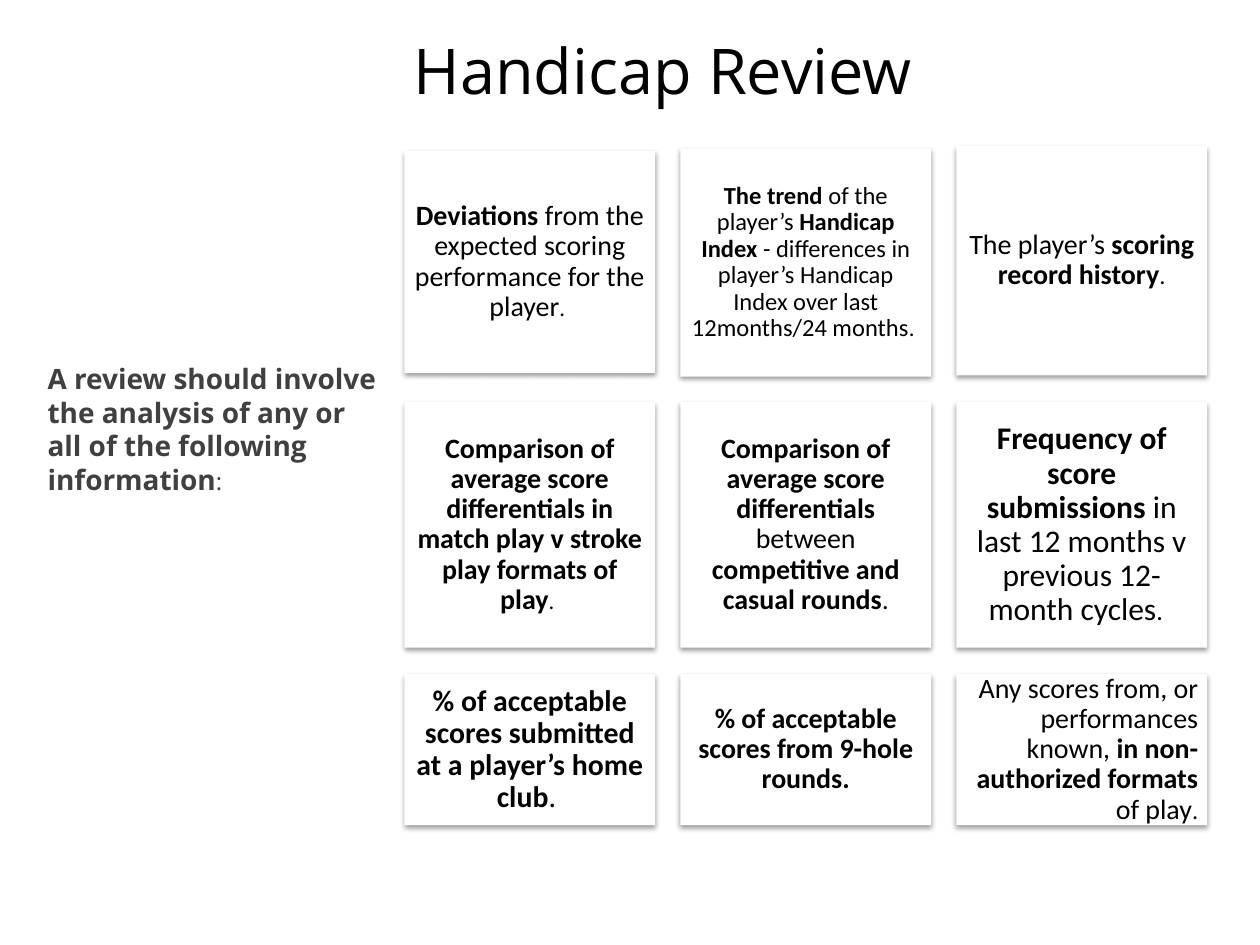
from lxml.etree import SubElement
from pptx import Presentation
from pptx.dml.color import RGBColor
from pptx.enum.shapes import MSO_SHAPE
from pptx.enum.text import MSO_ANCHOR, PP_ALIGN
from pptx.oxml.ns import qn
from pptx.util import Inches, Pt

COLORS = {"text": "000000", "lead": "404040", "card": "FFFFFF", "shadow": "000000"}

COLUMN_LEFTS = [3.21 + 2.19 * column for column in range(3)]
CARD_WIDTH = 1.99

# Each row lists its cards from left to right: top, height, runs, other format.
# A run is its text, size in points and whether it is bold.
CARD_ROWS = [
    [
        (1.2, 1.76, [("Deviations", 16, True),
                     (" from the expected scoring performance for the player", 16, False),
                     (". ", 13, False)], {}),
        (1.18, 1.81, [("The trend ", 14, True), ("of the player’s ", 14, False),
                      ("Handicap Index ", 14, True),
                      ("- differences in player’s Handicap Index over last "
                       "12months/24 months", 14, False),
                      (". ", 13, False)], {"margin": 0.06}),
        (1.16, 1.82, [("The player’s ", 16, False), ("scoring record history", 16, True),
                      (".", 14, False)], {}),
    ],
    [
        (3.19, 1.95, [("Comparison of average score differentials in match play "
                       "v stroke play formats of play", 16, True),
                      (". ", 13, False)], {}),
        (3.19, 1.95, [("Comparison of average score differentials ", 16, True),
                      ("between ", 16, False),
                      ("competitive and casual rounds", 16, True),
                      (".", 15, False)], {}),
        (3.19, 1.95, [("Frequency of score submissions ", 18, True),
                      ("in last 12 months v previous 12-month cycles", 18, False),
                      (".  ", 15, False)], {}),
    ],
    [
        (5.35, 1.2, [("% of acceptable scores submitted at a player’s home club", 17, True),
                     (". ", 17, False)], {}),
        (5.35, 1.2, [("% of acceptable scores from 9-hole rounds.", 16, True)], {}),
        (5.35, 1.2, [("Any scores from, or performances known, ", 16, False),
                     ("in non-authorized formats ", 16, True),
                     ("of play", 16, False), (".", 14, False)],
         {"align": PP_ALIGN.RIGHT}),
    ],
]


def write_text(shape, runs, font="Calibri", color="text", align=PP_ALIGN.CENTER,
               anchor=MSO_ANCHOR.MIDDLE, margins=(0.1, 0.05, 0.1, 0.05), line_spacing=1.0):
    """Fill the shape with one paragraph; margins run left, top, right, bottom."""
    frame = shape.text_frame
    frame.word_wrap = True
    frame.vertical_anchor = anchor
    (frame.margin_left, frame.margin_top,
     frame.margin_right, frame.margin_bottom) = map(Inches, margins)
    paragraph = frame.paragraphs[0]
    paragraph.alignment = align
    paragraph.line_spacing = line_spacing
    for text, size, bold in runs:
        run = paragraph.add_run()
        run.text = text
        run.font.name = font
        run.font.size = Pt(size)
        run.font.bold = bold
        run.font.color.rgb = RGBColor.from_string(COLORS[color])


def add_shadow(shape):
    shape.shadow.inherit = False
    effects = shape._element.spPr.find(qn("a:effectLst"))
    shadow = SubElement(effects, qn("a:outerShdw"), blurRad=str(Pt(3.1)), dist=str(Pt(1.6)),
                        dir=str(90 * 60000), rotWithShape="0")
    color = SubElement(shadow, qn("a:srgbClr"), val=COLORS["shadow"])
    SubElement(color, qn("a:alpha"), val="38000")


def add_title(slide, left, top, width, height):
    box = slide.shapes.add_textbox(*map(Inches, (left, top, width, height)))
    write_text(box, [("Handicap Review", 36, False)], font="Open Sans",
               margins=(0.62, 0.05, 0.1, 0.05))


def add_lead(slide, left, top, width, height):
    box = slide.shapes.add_textbox(*map(Inches, (left, top, width, height)))
    runs = [("A review should involve the analysis of any or all of the following information",
             16, True), (":", 13.5, False)]
    write_text(box, runs, font="Open Sans", color="lead", align=PP_ALIGN.LEFT,
               anchor=MSO_ANCHOR.TOP)


def add_card(slide, left, top, width, height, runs, margin=0.07, align=PP_ALIGN.CENTER):
    card = slide.shapes.add_shape(MSO_SHAPE.RECTANGLE,
                                  *map(Inches, (left, top, width, height)))
    card.fill.solid()
    card.fill.fore_color.rgb = RGBColor.from_string(COLORS["card"])
    card.line.fill.background()
    add_shadow(card)
    write_text(card, runs, align=align, margins=(margin,) * 4, line_spacing=0.9)


def add_cards(slide):
    for row in CARD_ROWS:
        for left, (top, height, runs, options) in zip(COLUMN_LEFTS, row):
            add_card(slide, left, top, CARD_WIDTH, height, runs, **options)


def main():
    presentation = Presentation()
    presentation.slide_width = Inches(10)
    presentation.slide_height = Inches(7.5)
    slide = presentation.slides.add_slide(presentation.slide_layouts[6])
    add_title(slide, 0, 0.05, 10, 1)
    add_lead(slide, 0.28, 2.82, 2.84, 3.69)
    add_cards(slide)
    presentation.save("out.pptx")


if __name__ == "__main__":
    main()
